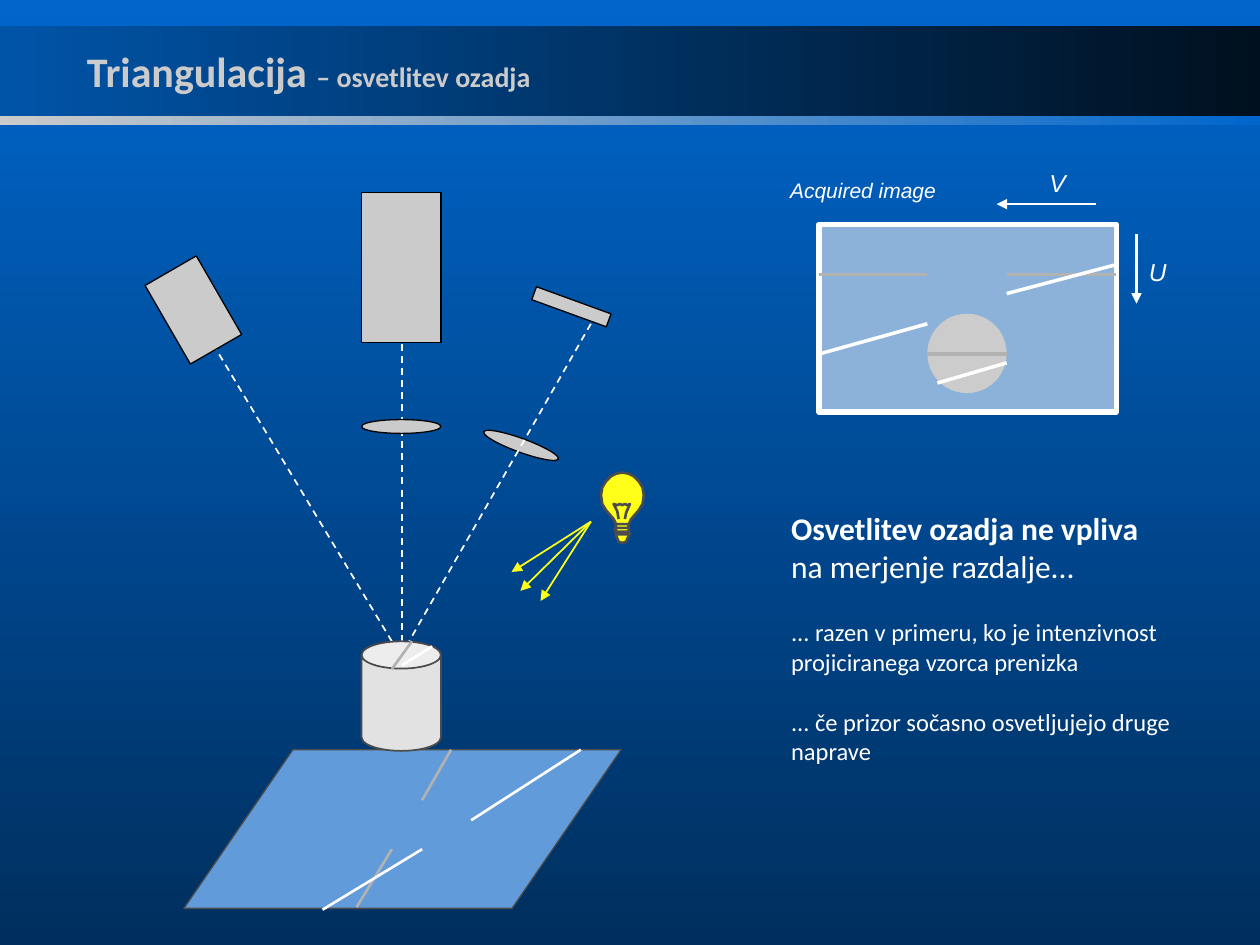
from lxml import etree
from pptx import Presentation
from pptx import util as u
from pptx.dml.color import RGBColor
from pptx.enum import dml, shapes, text
from pptx.oxml.ns import qn

COLORS = {
    "sky": "0066CC", "deep": "002F5E", "band": "0054A8", "night": "00101F",
    "silver": "CBCBCB", "disc": "CCCCCC", "stripe": "B2B2B2", "outline": "4C4C4C",
    "ground": "619BDA", "image": "8CB2D9", "can": "E2E2E2",
    "white": "FFFFFF", "black": "000000", "yellow": "FFFF1A",
}
SHAPE = shapes.MSO_SHAPE


def rgb(name):
    return RGBColor.from_string(COLORS[name])


def set_gradient(fill, start, end, angle):
    fill.gradient()
    fill.gradient_angle = angle
    for stop, name in zip(fill.gradient_stops, (start, end)):
        stop.color.rgb = rgb(name)


def style(shape, fill, line=None, width=0.75):
    shape.shadow.inherit = False
    if fill:
        shape.fill.solid()
        shape.fill.fore_color.rgb = rgb(fill)
    else:
        shape.fill.background()
    if line:
        shape.line.color.rgb = rgb(line)
        shape.line.width = u.Pt(width)
    else:
        shape.line.fill.background()


def add_part(slide, kind, box, fill, line=None, width=0.75, rotation=0, adjust=None):
    part = slide.shapes.add_shape(kind, *map(u.Inches, box))
    style(part, fill, line, width)
    part.rotation = rotation
    if adjust is not None:
        part.adjustments[0] = adjust
    return part


def add_band(slide, top, height, start, end):
    band = add_part(slide, SHAPE.RECTANGLE, (0, top, 10, height), start)
    set_gradient(band.fill, start, end, 0)


def add_line(slide, start, end, color="white", width=1.5, dashed=False, arrow=False):
    line = slide.shapes.add_connector(
        shapes.MSO_CONNECTOR.STRAIGHT, *map(u.Inches, (*start, *end)))
    line.line.color.rgb = rgb(color)
    line.line.width = u.Pt(width)
    if dashed:
        line.line.dash_style = dml.MSO_LINE.DASH
    if arrow:
        etree.SubElement(line.line._get_or_add_ln(), qn("a:tailEnd"), type="triangle")
    etree.SubElement(line._element.spPr, qn("a:effectLst"))


def add_run(paragraph, words, size, color="white", font="Calibri", bold=False, italic=False):
    run = paragraph.add_run()
    run.text = words
    run.font.size = u.Pt(size)
    run.font.name = font
    run.font.bold = bold
    run.font.italic = italic
    run.font.color.rgb = rgb(color)


def add_label(slide, words, box, size):
    frame = slide.shapes.add_textbox(*map(u.Inches, box)).text_frame
    frame.word_wrap = False
    frame.vertical_anchor = text.MSO_ANCHOR.MIDDLE
    frame.paragraphs[0].alignment = text.PP_ALIGN.CENTER
    add_run(frame.paragraphs[0], words, size, font="Arial", italic=True)


def add_note(slide, box, size, *runs):
    frame = slide.shapes.add_textbox(*map(u.Inches, box)).text_frame
    frame.word_wrap = True
    for words, bold in runs:
        add_run(frame.paragraphs[0], words, size, bold=bold)


def add_outline(slide, strokes, fill, closed):
    strokes = [[(u.Inches(x), u.Inches(y)) for x, y in stroke] for stroke in strokes]
    builder = slide.shapes.build_freeform(*strokes[0][0])
    for index, (first, *rest) in enumerate(strokes):
        if index:
            builder.move_to(*first)
        builder.add_line_segments(rest, close=closed)
    style(builder.convert_to_shape(), fill, "outline", 1.5)


def add_title(slide):
    title = slide.shapes.title
    title.left, title.top, title.width, title.height = map(u.Inches, (0.59, 0.21, 7.56, 0.71))
    slide.shapes._spTree.append(title._element)  # in front of the header band
    title.text_frame.vertical_anchor = text.MSO_ANCHOR.MIDDLE
    heading = title.text_frame.paragraphs[0]
    heading.alignment = text.PP_ALIGN.LEFT
    add_run(heading, "Triangulacija ", 24, "silver", bold=True)
    add_run(heading, "– osvetlitev ozadja", 16, "silver", bold=True)


def add_bulb(slide):
    axis = 4.94
    half = [(0, 3.75), (0.05, 3.76), (0.09, 3.78), (0.13, 3.82), (0.16, 3.87),
            (0.17, 3.93), (0.16, 4), (0.13, 4.05), (0.07, 4.12), (0.05, 4.16),
            (0.05, 4.25), (0.03, 4.3), (0, 4.31)]
    glass = [(axis + x, y) for x, y in half] + [(axis - x, y) for x, y in half[-2:0:-1]]
    filament = [(4.91, 4.12), (4.9, 4.06), (4.87, 4), (4.9, 4.01), (4.92, 4), (4.94, 4.01),
                (4.96, 4), (4.98, 4.01), (5, 4), (4.97, 4.07), (4.96, 4.12)]
    thread = [(4.88, 4.16), (4.99, 4.16), (4.99, 4.19), (4.88, 4.19),
              (4.88, 4.22), (4.99, 4.22), (5, 4.24), (4.88, 4.24)]
    add_outline(slide, [glass], "yellow", True)
    add_outline(slide, [filament, thread], None, False)
    for tip in ((4.06, 4.54), (4.29, 4.77), (4.13, 4.69)):
        add_line(slide, (4.69, 4.14), tip, "yellow", 1, arrow=True)


def add_scene(slide):
    # Optical axes behind the devices
    add_line(slide, (1.69, 2.73), (3.11, 5.09), width=1, dashed=True)
    add_line(slide, (3.19, 1.86), (3.19, 6.27), width=1, dashed=True)

    # Ground with the projected stripe
    add_part(slide, SHAPE.PARALLELOGRAM, (1.46, 5.95, 3.47, 1.26), "ground", "outline",
             adjust=0.687)
    add_line(slide, (3.11, 6.74), (2.83, 7.2), "stripe")
    add_line(slide, (3.58, 5.95), (3.35, 6.35), "stripe")

    # Camera, lenses, sensor and projector
    for kind, box, rotation in (
        (SHAPE.RECTANGLE, (2.87, 1.53, 0.63, 1.19), 0),
        (SHAPE.OVAL, (2.87, 3.33, 0.63, 0.11), 0),
        (SHAPE.OVAL, (3.82, 3.48, 0.63, 0.11), 20),
        (SHAPE.RECTANGLE, (4.22, 2.38, 0.63, 0.11), 20),
        (SHAPE.RECTANGLE, (1.3, 2.1, 0.47, 0.72), 330),
    ):
        add_part(slide, kind, box, "silver", "black", rotation=rotation)
    add_line(slide, (4.69, 2.57), (3.19, 5.19), width=1, dashed=True)

    # Measured cylinder
    add_part(slide, SHAPE.CAN, (2.87, 5.09, 0.63, 0.87), "can", "outline", 1, adjust=0.344)
    add_line(slide, (3.27, 5.09), (3.11, 5.31), "stripe")

    # Stripes from the second light
    for start, end in (((3.43, 5.13), (3.19, 5.28)), ((3.35, 6.74), (2.56, 7.22)),
                       ((4.61, 5.95), (3.74, 6.51))):
        add_line(slide, start, end)
    add_bulb(slide)


def add_acquired_image(slide):
    add_part(slide, SHAPE.RECTANGLE, (6.5, 1.78, 2.36, 1.49), "image", "white", 3)
    add_part(slide, SHAPE.OVAL, (7.36, 2.49, 0.63, 0.63), "disc")
    add_line(slide, (7.36, 2.81), (7.99, 2.81), "stripe", 2)
    add_line(slide, (7.99, 2.18), (8.86, 2.18), "stripe", 1.75)
    add_line(slide, (6.5, 2.18), (7.36, 2.18), "stripe", 1.75)
    for start, end in (((7.44, 3.04), (7.99, 2.88)), ((7.99, 2.33), (8.86, 2.1)),
                       ((6.5, 2.81), (7.36, 2.57))):
        add_line(slide, start, end, width=2)

    # Image axes
    add_line(slide, (8.7, 1.62), (7.91, 1.62), arrow=True)
    add_line(slide, (9.02, 1.86), (9.02, 2.41), arrow=True)
    add_label(slide, "U", (9.02, 2.02, 0.32, 0.28), 14)
    add_label(slide, "V", (8.23, 1.31, 0.32, 0.28), 14)
    add_label(slide, "Acquired image", (6.1, 1.39, 1.5, 0.24), 12)


def main():
    deck = Presentation()
    deck.slide_width, deck.slide_height = u.Inches(10), u.Inches(7.5)
    slide = deck.slides.add_slide(deck.slide_layouts[5])
    set_gradient(slide.background.fill, "sky", "deep", 270)

    # Header
    add_band(slide, 0.91, 0.08, "silver", "sky")
    add_band(slide, 0.21, 0.71, "band", "night")
    add_title(slide)

    add_scene(slide)
    add_acquired_image(slide)

    # Conclusions
    add_note(slide, (6.18, 3.99, 3.15, 0.71), 18,
             ("Osvetlitev ozadja ne vpliva ", True), ("na merjenje razdalje...", False))
    add_note(slide, (6.18, 4.85, 3.66, 0.57), 14,
             ("... razen v primeru, ko je intenzivnost projiciranega vzorca prenizka", False))
    add_note(slide, (6.18, 5.56, 3.31, 0.93), 14,
             ("... če prizor sočasno osvetljujejo druge naprave", False))
    deck.save("out.pptx")


if __name__ == "__main__":
    main()
